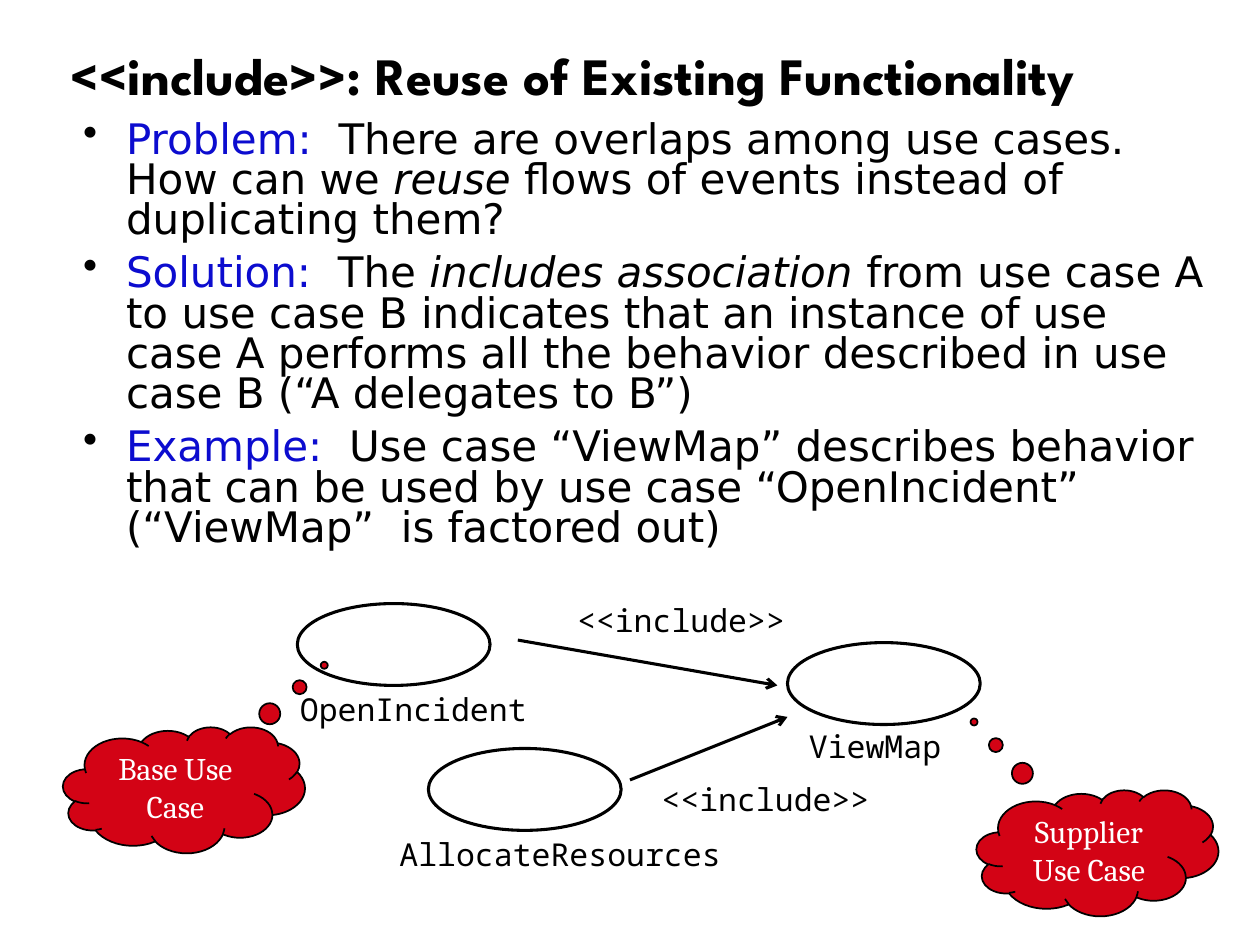
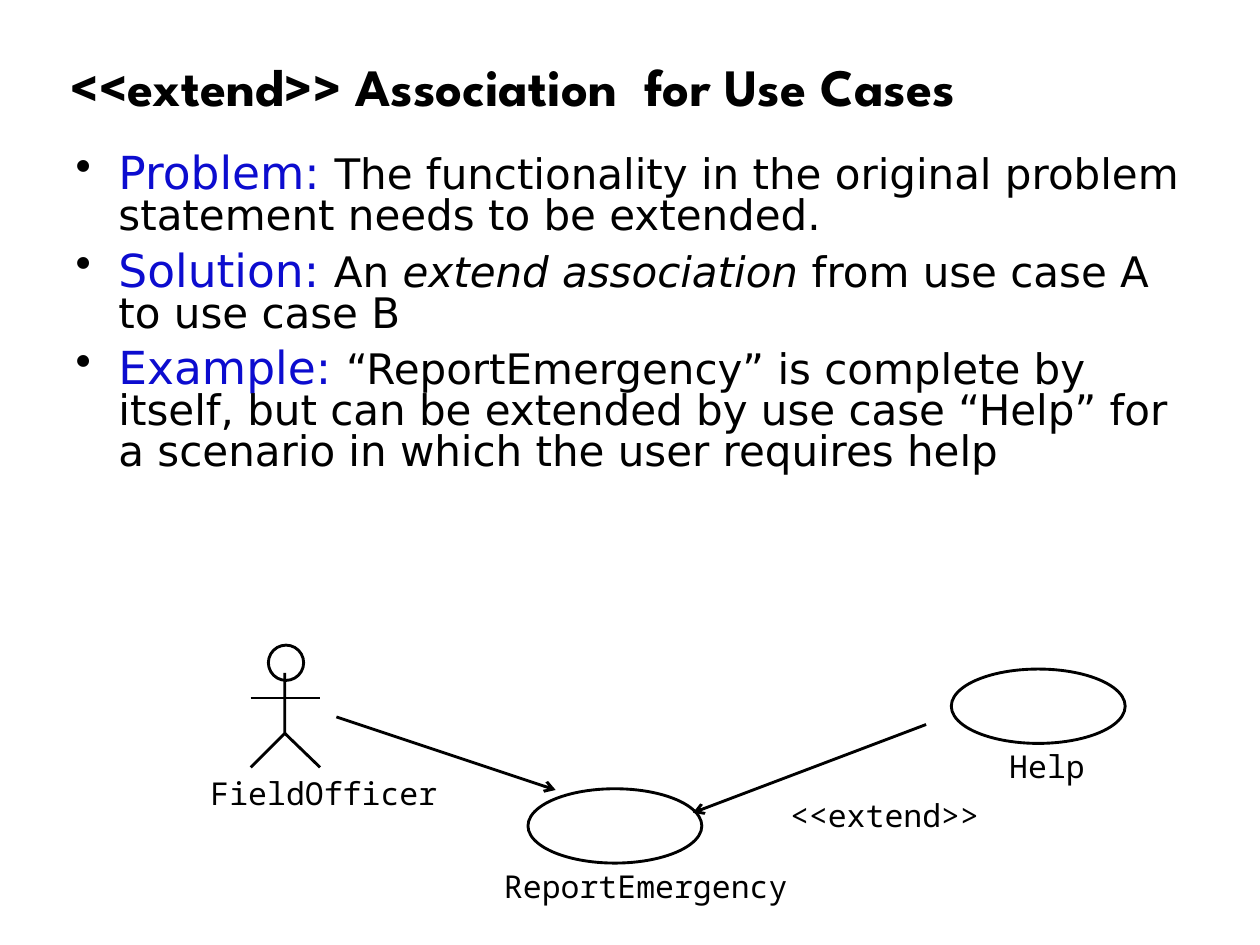
from dataclasses import dataclass

from lxml import etree
from pptx import Presentation
from pptx.dml.color import RGBColor
from pptx.enum.shapes import MSO_CONNECTOR, MSO_SHAPE
from pptx.enum.text import MSO_ANCHOR, MSO_AUTO_SIZE, PP_ALIGN
from pptx.oxml.ns import qn
from pptx.util import Inches, Pt

ELLIPSE = MSO_SHAPE.OVAL
CLOUD = MSO_SHAPE.CLOUD_CALLOUT
STRAIGHT = MSO_CONNECTOR.STRAIGHT
MIDDLE = MSO_ANCHOR.MIDDLE
LEFT, CENTER = PP_ALIGN.LEFT, PP_ALIGN.CENTER
NO_FIT, FIT_SHAPE = MSO_AUTO_SIZE.NONE, MSO_AUTO_SIZE.SHAPE_TO_FIT_TEXT

COLORS = {"ink": "000000", "lead": "0C0CCF", "cloud": "D30315", "paper": "FFFFFF"}
FONTS = {"title": "League Spartan", "body": "DejaVu Sans",
         "label": "Noto Sans Mono", "cloud": "Cambria"}
TITLE_ONLY = 5
BODY_SIZE = 24
BULLET_INDENT = 0.34
LABEL_HEIGHT = 0.3

Point = tuple[float, float]
Box = tuple[float, float, float, float]


@dataclass
class Bullet:
    lead: str
    phrases: list[str]  # every second phrase is in italics


@dataclass
class Label:
    text: str
    left: float
    top: float
    width: float


@dataclass
class UseCase:
    left: float
    top: float
    label: Label


@dataclass
class Link:
    start: Point
    end: Point
    arrow: bool = True


@dataclass
class Cloud:
    left: float
    top: float
    lines: list[str]
    pointer: Point


@dataclass
class Diagram:
    """Sizes and contents of the use case drawing of one slide."""
    oval: Point
    line_width: float
    use_cases: list[UseCase]
    labels: list[Label]
    links: list[Link]


def color(name: str) -> RGBColor:
    return RGBColor.from_string(COLORS[name])


def inches(*lengths: float) -> list:
    return [Inches(length) for length in lengths]


def set_font(paragraph, face: str, size: float, ink: str = "ink") -> None:
    font = paragraph.font
    font.name, font.size = FONTS[face], Pt(size)
    font.color.rgb = color(ink)


def outline(shape, width: float) -> None:
    shape.line.color.rgb = color("ink")
    shape.line.width = Pt(width)


# Title and bullets
def add_titled_slide(prs, title: str, box: Box):
    slide = prs.slides.add_slide(prs.slide_layouts[TITLE_ONLY])
    heading = slide.shapes.title
    heading.left, heading.top, heading.width, heading.height = inches(*box)
    frame = heading.text_frame
    frame.text = title
    frame.vertical_anchor, frame.auto_size = MIDDLE, NO_FIT
    paragraph = frame.paragraphs[0]
    paragraph.alignment, paragraph.line_spacing = LEFT, 0.9
    set_font(paragraph, "title", 30)
    paragraph.font.bold = True
    return slide


def add_bullet_mark(paragraph) -> None:
    props = paragraph._p.get_or_add_pPr()
    props.set("marL", str(Inches(BULLET_INDENT)))
    props.set("indent", str(-Inches(BULLET_INDENT)))
    mark_color = etree.SubElement(props, qn("a:buClr"))
    etree.SubElement(mark_color, qn("a:srgbClr"), val=COLORS["ink"])
    etree.SubElement(props, qn("a:buChar"), char="•")


def add_bullets(slide, box: Box, bullets: list[Bullet], lead_size: float) -> None:
    frame = slide.shapes.add_textbox(*inches(*box)).text_frame
    frame.word_wrap = True
    frame.margin_left = frame.margin_right = Inches(0.09)
    for index, bullet in enumerate(bullets):
        paragraph = frame.add_paragraph() if index else frame.paragraphs[0]
        add_bullet_mark(paragraph)
        paragraph.line_spacing = 0.8
        paragraph.space_before = Pt(0.3 * lead_size)
        set_font(paragraph, "body", BODY_SIZE)
        lead = paragraph.add_run()
        lead.text = bullet.lead
        lead.font.size = Pt(lead_size)
        lead.font.color.rgb = color("lead")
        for number, phrase in enumerate(bullet.phrases):
            run = paragraph.add_run()
            run.text = phrase
            if number % 2:
                run.font.italic = True


# Elements of the use case diagrams
def add_label(slide, label: Label) -> None:
    box = inches(label.left, label.top, label.width, LABEL_HEIGHT)
    frame = slide.shapes.add_textbox(*box).text_frame
    frame.margin_left = frame.margin_right = frame.margin_top = frame.margin_bottom = 0
    frame.word_wrap, frame.auto_size = False, FIT_SHAPE
    frame.text = label.text
    set_font(frame.paragraphs[0], "label", 18)


def add_oval(slide, box: Box, line_width: float) -> None:
    oval = slide.shapes.add_shape(ELLIPSE, *inches(*box))
    oval.shadow.inherit = False
    oval.fill.background()
    outline(oval, line_width)


def add_link(slide, link: Link, line_width: float) -> None:
    connector = slide.shapes.add_connector(STRAIGHT, *inches(*link.start, *link.end))
    outline(connector, line_width)
    props = connector.element.spPr
    if link.arrow:
        etree.SubElement(props.find(qn("a:ln")), qn("a:tailEnd"), type="arrow")
    etree.SubElement(props, qn("a:effectLst"))


def add_diagram(slide, diagram: Diagram) -> None:
    for case in diagram.use_cases:
        add_oval(slide, (case.left, case.top, *diagram.oval), diagram.line_width)
        add_label(slide, case.label)
    for link in diagram.links:
        add_link(slide, link, diagram.line_width)
    for label in diagram.labels:
        add_label(slide, label)


def add_cloud(slide, cloud: Cloud) -> None:
    callout = slide.shapes.add_shape(CLOUD, *inches(cloud.left, cloud.top, 1.92, 1))
    callout.adjustments[0], callout.adjustments[1] = cloud.pointer
    callout.shadow.inherit = False
    callout.fill.solid()
    callout.fill.fore_color.rgb = color("cloud")
    outline(callout, 1)
    frame = callout.text_frame
    frame.word_wrap, frame.vertical_anchor = False, MIDDLE
    frame.text = "\n".join(cloud.lines)
    for paragraph in frame.paragraphs:
        paragraph.alignment = CENTER
        set_font(paragraph, "cloud", 18, "paper")


def add_actor(slide, line_width: float) -> None:
    left, spine, right = 1.99, 2.26, 2.54
    neck, arms, hip, feet = 5.34, 5.54, 5.82, 6.09
    add_oval(slide, (2.13, 5.12, 0.28, 0.28), line_width)
    builder = slide.shapes.build_freeform(*inches(spine, neck))
    builder.add_line_segments([inches(spine, hip), inches(left, feet)], close=False)
    body = builder.convert_to_shape()
    body.shadow.inherit = False
    body.fill.background()
    outline(body, line_width)
    for start, end in (((spine, hip), (right, feet)), ((left, arms), (right, arms))):
        add_link(slide, Link(start, end, arrow=False), line_width)


# Slides
def build_include_slide(prs) -> None:
    slide = add_titled_slide(prs, "<<include>>: Reuse of Existing Functionality",
                             (0.46, 0.24, 9.21, 0.77))
    add_bullets(slide, (0.57, 0.92, 9.09, 3.17), [
        Bullet("Problem:", ["  There are overlaps among use cases. How can we ", "reuse",
                            " flows of events instead of duplicating them?"]),
        Bullet("Solution:", ["  The ", "includes association",
                             " from use case A to use case B indicates that an instance "
                             "of use case A performs all the behavior described in use "
                             "case B (“A delegates to B”)"]),
        Bullet("Example:", ["  Use case “ViewMap” describes behavior that can be used by "
                            "use case “OpenIncident” (“ViewMap”  is factored out)"]),
    ], lead_size=24)
    add_diagram(slide, Diagram(
        oval=(1.53, 0.65), line_width=1.75,
        use_cases=[
            UseCase(6.25, 5.1, Label("ViewMap", 6.42, 5.77, 1.05)),
            UseCase(2.36, 4.79, Label("OpenIncident", 2.38, 5.48, 1.81)),
            UseCase(3.4, 5.94, Label("AllocateResources", 3.17, 6.63, 2.56)),
        ],
        labels=[Label("<<include>>", 5.25, 6.19, 1.66),
                Label("<<include>>", 4.58, 4.77, 1.66)],
        links=[Link((5, 6.19), (6.25, 5.69)), Link((4.11, 5.08), (6.17, 5.44))]))
    add_cloud(slide, Cloud(0.5, 5.77, ["Base Use", "Case"], (0.58, -0.99)))
    add_cloud(slide, Cloud(7.75, 6.27, ["Supplier", "Use Case"], (-0.51, -1.04)))


def build_extend_slide(prs) -> None:
    slide = add_titled_slide(prs, "<<extend>> Association  for Use Cases",
                             (0.46, 0.24, 8.92, 0.94))
    add_bullets(slide, (0.51, 1.18, 8.98, 2.87), [
        Bullet("Problem: ", ["The functionality in the original problem statement needs "
                             "to be extended."]),
        Bullet("Solution: ", ["An ", "extend association",
                              " from use case A to use case B"]),
        Bullet("Example: ", ["“ReportEmergency” is complete by itself, but can be extended "
                             "by use case “Help” for a scenario in which the user "
                             "requires help"]),
    ], lead_size=26)
    diagram = Diagram(
        oval=(1.38, 0.59), line_width=1.63,
        use_cases=[
            UseCase(4.19, 6.26, Label("ReportEmergency", 4, 6.88, 2.26)),
            UseCase(7.55, 5.31, Label("Help", 8.01, 5.93, 0.6)),
        ],
        labels=[Label("FieldOfficer", 1.67, 6.14, 1.81),
                Label("<<extend>>", 6.27, 6.32, 1.51)],
        links=[Link((2.67, 5.69), (4.41, 6.27)), Link((7.35, 5.75), (5.5, 6.45))])
    add_diagram(slide, diagram)
    add_actor(slide, diagram.line_width)


def main() -> None:
    prs = Presentation()
    prs.slide_width, prs.slide_height = inches(10, 7.5)
    build_include_slide(prs)
    build_extend_slide(prs)
    prs.save("out.pptx")


if __name__ == "__main__":
    main()
